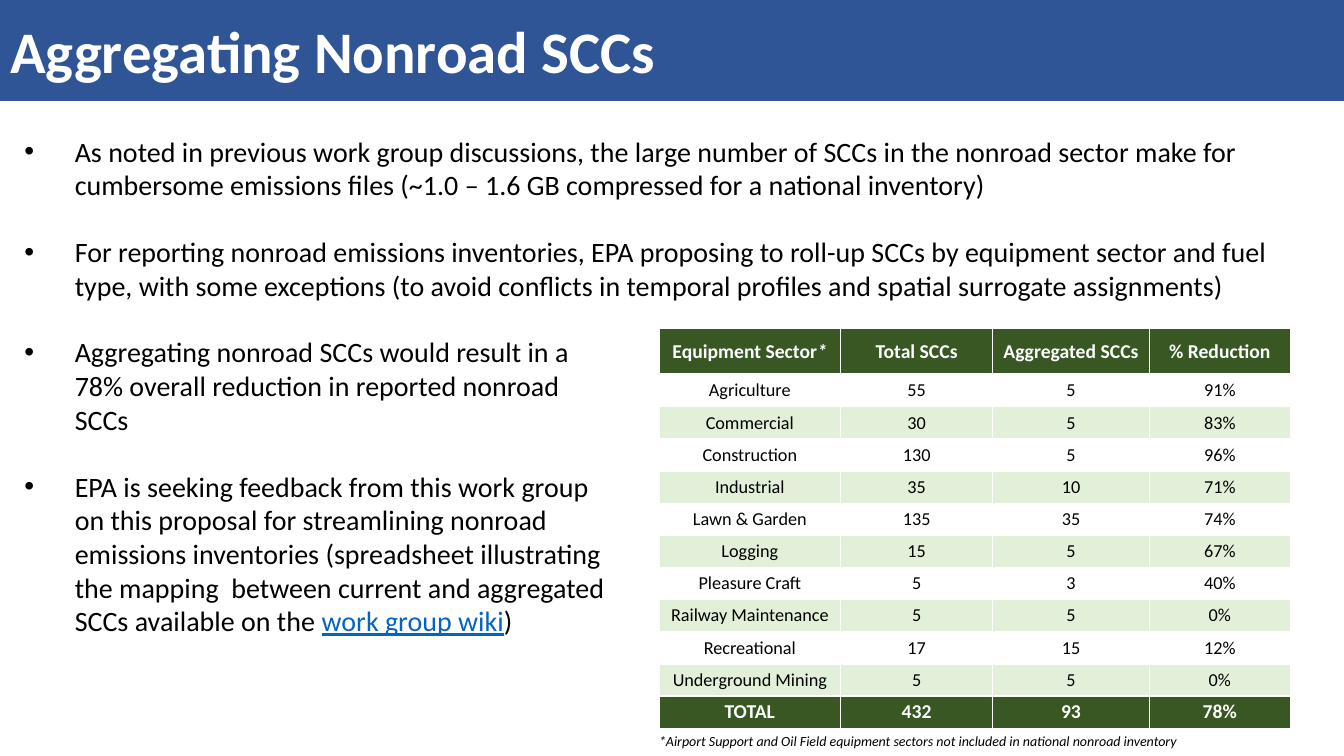
"""Build the slide on aggregating nonroad SCCs."""
from lxml.etree import SubElement
from pptx import Presentation
from pptx.dml.color import RGBColor
from pptx.enum.text import MSO_ANCHOR as Anchor, MSO_AUTO_SIZE as AutoSize, PP_ALIGN as Align
from pptx.oxml.ns import qn
from pptx.util import Cm, Pt

COLORS = {"banner": "2F5597", "header": "385723", "band": "E2F0D9",
          "white": "FFFFFF", "ink": "000000", "link": "0563C1"}
FONT = "Calibri"

HEADLINE = "Aggregating Nonroad SCCs"
BACKGROUND_POINTS = [
    [("As noted in previous work group discussions, the large number of SCCs in the nonroad "
      "sector make for cumbersome emissions files (~1.0 – 1.6 GB compressed for a national "
      "inventory)", {})],
    [("For reporting nonroad emissions inventories, EPA proposing to roll-up SCCs by equipment "
      "sector and fuel type, with some exceptions (to avoid conflicts in temporal profiles and "
      "spatial surrogate assignments)", {})],
]
PROPOSAL_POINTS = [
    [("Aggregating nonroad SCCs would result in a 78% overall reduction in reported nonroad "
      "SCCs", {})],
    [("EPA is seeking feedback from this work group on this proposal for streamlining nonroad "
      "emissions inventories (spreadsheet illustrating the mapping  between current and "
      "aggregated SCCs available on the ", {}),
     ("work group wiki", {"color": "link", "underline": True}),
     (")", {})],
]
SECTORS = [
    ("Equipment Sector", "Total SCCs", "Aggregated SCCs", "% Reduction"),
    ("Agriculture", "55", "5", "91%"),
    ("Commercial", "30", "5", "83%"),
    ("Construction", "130", "5", "96%"),
    ("Industrial", "35", "10", "71%"),
    ("Lawn & Garden", "135", "35", "74%"),
    ("Logging", "15", "5", "67%"),
    ("Pleasure Craft", "5", "3", "40%"),
    ("Railway Maintenance", "5", "5", "0%"),
    ("Recreational", "17", "15", "12%"),
    ("Underground Mining", "5", "5", "0%"),
    ("TOTAL", "432", "93", "78%"),
]
FOOTNOTE = ("*Airport Support and Oil Field equipment sectors not included in national "
            "nonroad inventory")

SLIDE_WIDTH, SLIDE_HEIGHT = Cm(33.87), Cm(19.05)
COLUMN_WIDTHS = [Cm(4.57), Cm(3.84), Cm(3.94), Cm(3.56)]
HEADER_HEIGHT, ROW_HEIGHT = Cm(1.16), Cm(0.81)
BULLET_INDENT = Cm(1.27)


def write(paragraph, text, size=20, color="ink", bold=False, italic=False, underline=False):
    """Add a formatted run to a paragraph."""
    run = paragraph.add_run()
    run.text = text
    font = run.font
    font.name, font.size = FONT, Pt(size)
    font.bold, font.italic, font.underline = bold, italic, underline
    font.color.rgb = RGBColor.from_string(COLORS[color])


def place(shape, left, top, width, height):
    """Move and size a shape."""
    shape.left, shape.top, shape.width, shape.height = left, top, width, height


def fill_list(body, points):
    """Write bulleted points into a body placeholder."""
    frame = body.text_frame
    frame.auto_size, frame.word_wrap = AutoSize.NONE, True
    for index, point in enumerate(points):
        paragraph = frame.add_paragraph() if index else frame.paragraphs[0]
        paragraph.space_before = Pt(24 if index else 0)
        properties = paragraph._p.get_or_add_pPr()
        properties.set("marL", str(BULLET_INDENT))
        properties.set("indent", str(-BULLET_INDENT))
        SubElement(properties, qn("a:buFont"), typeface="Arial")
        SubElement(properties, qn("a:buChar"), char="•")
        for text, style in point:
            write(paragraph, text, **style)


def add_borders(cell, bottom):
    """Give a cell white borders, with a bottom line of the given points."""
    properties = cell._tc.get_or_add_tcPr()
    for side, points in {"lnL": 1, "lnR": 1, "lnT": 1, "lnB": bottom}.items():
        line = SubElement(properties, qn(f"a:{side}"), w=str(Pt(points)))
        fill = SubElement(line, qn("a:solidFill"))
        SubElement(fill, qn("a:srgbClr"), val=COLORS["white"])


def add_sector_table(slide):
    """Add the table of SCC counts by equipment sector."""
    last = len(SECTORS) - 1
    table = slide.shapes.add_table(
        len(SECTORS), len(COLUMN_WIDTHS), Cm(16.61), Cm(8.28),
        sum(COLUMN_WIDTHS), HEADER_HEIGHT + last * ROW_HEIGHT).table
    table.first_row = table.horz_banding = False
    for column, width in zip(table.columns, COLUMN_WIDTHS):
        column.width = width
    for index, sector in enumerate(SECTORS):
        strong = index in (0, last)
        shade = "header" if strong else "white" if index % 2 else "band"
        style = {"size": 14, "color": "white", "bold": True} if strong else {"size": 13}
        table.rows[index].height = ROW_HEIGHT if index else HEADER_HEIGHT
        for column, text in enumerate(sector):
            cell = table.cell(index, column)
            add_borders(cell, bottom=1 if index else 3)
            cell.fill.solid()
            cell.fill.fore_color.rgb = RGBColor.from_string(COLORS[shade])
            cell.vertical_anchor = Anchor.MIDDLE
            cell.margin_top = cell.margin_bottom = Cm(0.05)
            cell.margin_left = cell.margin_right = Cm(0.1)
            paragraph = cell.text_frame.paragraphs[0]
            paragraph.alignment = Align.CENTER
            write(paragraph, text, **style)
            if index == column == 0:
                write(paragraph, "*", italic=True, **style)


def main():
    """Assemble and save the slide."""
    deck = Presentation()
    deck.slide_width, deck.slide_height = SLIDE_WIDTH, SLIDE_HEIGHT
    slide = deck.slides.add_slide(deck.slide_layouts.get_by_name("Two Content"))
    title, background, proposal = slide.placeholders

    place(title, 0, 0, SLIDE_WIDTH, Cm(2.54))
    title.fill.solid()
    title.fill.fore_color.rgb = RGBColor.from_string(COLORS["banner"])
    title.text_frame.auto_size = AutoSize.NONE
    title.text_frame.vertical_anchor = Anchor.MIDDLE
    heading = title.text_frame.paragraphs[0]
    heading.alignment = Align.LEFT
    write(heading, HEADLINE, size=42, color="white", bold=True)

    place(background, Cm(0.36), Cm(3.25), Cm(32.51), Cm(4.52))
    fill_list(background, BACKGROUND_POINTS)
    place(proposal, Cm(0.36), Cm(8.31), Cm(15.14), Cm(7.95))
    fill_list(proposal, PROPOSAL_POINTS)

    add_sector_table(slide)
    footnote = slide.shapes.add_textbox(Cm(16.36), Cm(18.34), Cm(13.69), Cm(0.69))
    footnote.text_frame.word_wrap = False
    write(footnote.text_frame.paragraphs[0], FOOTNOTE, size=10, italic=True)

    deck.save("out.pptx")


if __name__ == "__main__":
    main()
